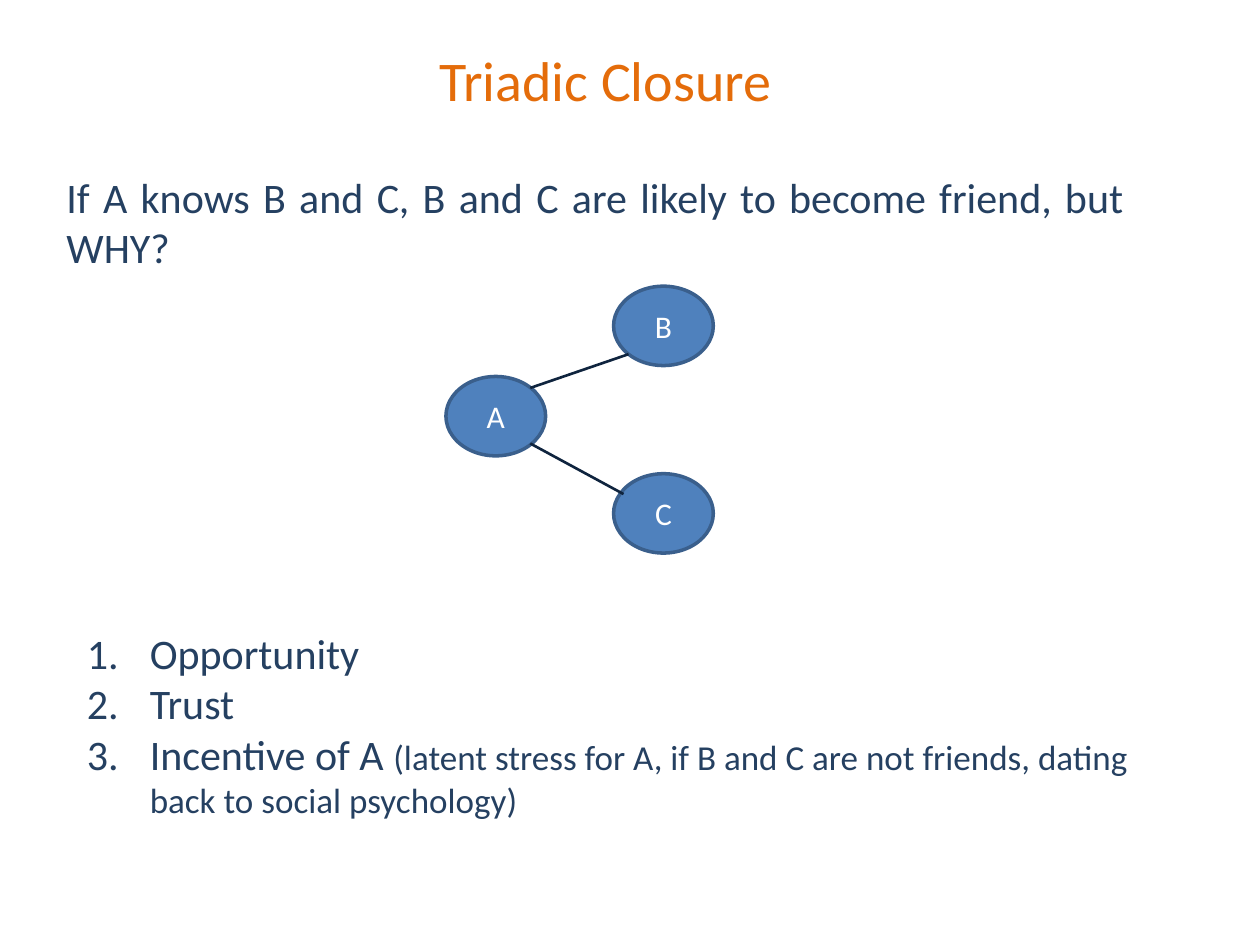
from pptx import Presentation
from pptx import util as u
from pptx.dml.color import RGBColor
from pptx.enum import shapes, text
from lxml import etree

ORANGE, NAVY, WHITE = "E46C0A", "254061", "FFFFFF"
NODE_FILL, NODE_LINE, EDGE = "4F81BD", "3A5F8C", "0F243E"
NODE_WIDTH, NODE_HEIGHT = 2.01, 1.6
DRAWING = "http://schemas.openxmlformats.org/drawingml/2006/main"


def colour(value):
    return RGBColor.from_string(value)


def add_span(para, words, size, shade):
    span = para.add_run()
    span.text = words
    span.font.name = "Calibri"
    span.font.size = u.Pt(size)
    span.font.color.rgb = colour(shade)


def set_title(page, words, left, top, width, height):
    title = page.shapes.title
    title.left, title.top = u.Cm(left), u.Cm(top)
    title.width, title.height = u.Cm(width), u.Cm(height)
    title.text_frame.auto_size = text.MSO_AUTO_SIZE.NONE
    para = title.text_frame.paragraphs[0]
    para.alignment = text.PP_ALIGN.CENTER
    add_span(para, words, 32, ORANGE)


def add_text(page, left, top, width, height):
    box = page.shapes.add_textbox(u.Cm(left), u.Cm(top), u.Cm(width), u.Cm(height))
    box.text_frame.word_wrap = True
    return box.text_frame


def add_question(page, words):
    para = add_text(page, 1.09, 3.33, 21.82, 2.31).paragraphs[0]
    para.alignment = text.PP_ALIGN.JUSTIFY
    add_span(para, words, 24, NAVY)


def number_paragraph(para):
    settings = para._p.get_or_add_pPr()
    settings.set("marL", str(u.Cm(1.27)))
    settings.set("indent", str(u.Cm(-1.27)))
    etree.SubElement(settings, f"{{{DRAWING}}}buFont", typeface="+mj-lt")
    etree.SubElement(settings, f"{{{DRAWING}}}buAutoNum", type="arabicPeriod")


def add_reasons(page, reasons):
    frame = add_text(page, 1.5, 12.52, 21.64, 4.19)
    for index, spans in enumerate(reasons):
        para = frame.add_paragraph() if index else frame.paragraphs[0]
        number_paragraph(para)
        for words, size in spans:
            add_span(para, words, size, NAVY)


def add_node(page, label, left, top):
    node = page.shapes.add_shape(shapes.MSO_SHAPE.OVAL, u.Cm(left), u.Cm(top),
                                 u.Cm(NODE_WIDTH), u.Cm(NODE_HEIGHT))
    node.shadow.inherit = False
    node.fill.solid()
    node.fill.fore_color.rgb = colour(NODE_FILL)
    node.line.color.rgb = colour(NODE_LINE)
    node.line.width = u.Pt(2)
    node.text_frame.vertical_anchor = text.MSO_ANCHOR.MIDDLE
    para = node.text_frame.paragraphs[0]
    para.alignment = text.PP_ALIGN.CENTER
    add_span(para, label, 18, WHITE)


def add_edge(page, *ends):
    edge = page.shapes.add_connector(shapes.MSO_CONNECTOR.STRAIGHT, *map(u.Cm, ends))
    edge.line.color.rgb = colour(EDGE)
    edge.line.width = u.Pt(1.5)
    etree.SubElement(edge._element.spPr, f"{{{DRAWING}}}effectLst")


def main():
    deck = Presentation()
    deck.slide_width, deck.slide_height = u.Cm(25.4), u.Cm(19.05)
    page = deck.slides.add_slide(deck.slide_layouts[5])
    set_title(page, "Triadic Closure", 3.18, 0.79, 18.06, 1.63)
    add_question(page, "If A knows B and C, B and C are likely to become friend, but WHY?")
    add_reasons(page, [
        [("Opportunity", 24)],
        [("Trust", 24)],
        [("Incentive of A ", 24),
         ("(latent stress for A, if B and C are not friends, "
          "dating back to social psychology)", 20)],
    ])
    for label, left, top in (("B", 12.37, 5.77), ("A", 8.99, 7.59), ("C", 12.37, 9.55)):
        add_node(page, label, left, top)
    add_edge(page, 10.69, 7.82, 12.67, 7.14)
    add_edge(page, 10.69, 8.94, 12.57, 9.96)
    deck.save("out.pptx")


if __name__ == "__main__":
    main()
